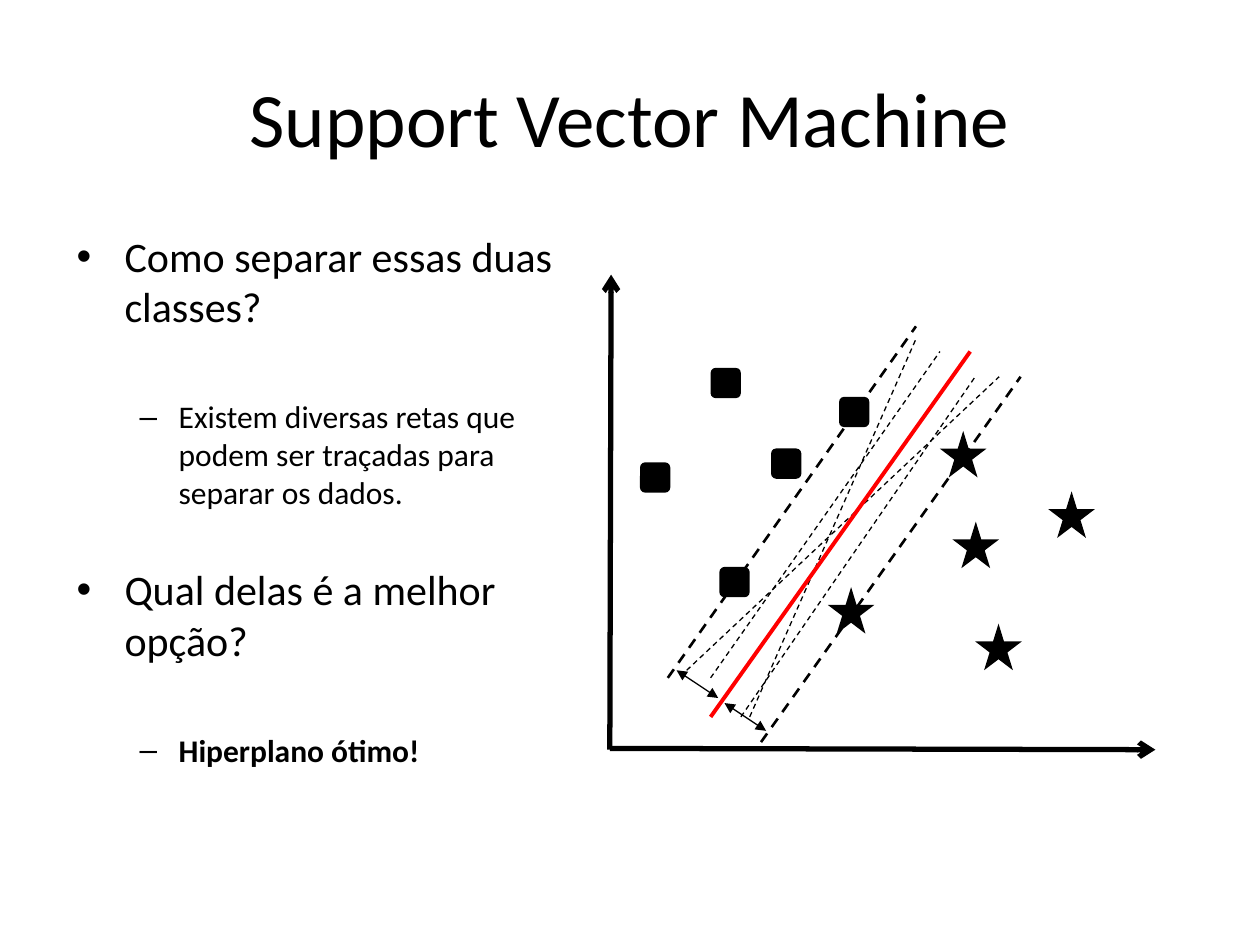
"""Build the Support Vector Machine slide with its separating-lines diagram."""
import pptx
import pptx.dml.color
import pptx.enum.dml
import pptx.enum.shapes
import pptx.enum.text
import pptx.oxml.ns
import pptx.util
from lxml import etree

Inches, Pt = pptx.util.Inches, pptx.util.Pt
RGB = pptx.dml.color.RGBColor
SHAPE = pptx.enum.shapes.MSO_SHAPE
qn = pptx.oxml.ns.qn
THEME = {"font": "Calibri", "ink": RGB(0, 0, 0), "best": RGB(255, 0, 0),
         "paper": RGB(255, 255, 255), "title": 44, "levels": (24, 18)}


def add_line(s, start, end, width, color=THEME["ink"], dashed=False, head=None, tail=None):
    c = s.shapes.add_connector(pptx.enum.shapes.MSO_CONNECTOR.STRAIGHT,
                               *map(Inches, start + end))
    c.line.width = Pt(width)
    c.line.color.rgb = color
    if dashed:
        c.line.dash_style = pptx.enum.dml.MSO_LINE.DASH
    for tag, kind in (("a:headEnd", head), ("a:tailEnd", tail)):
        if kind:
            etree.SubElement(c.line._get_or_add_ln(), qn(tag), type=kind)
    etree.SubElement(c._element.spPr, qn("a:effectLst"))


def add_run(p, text, size, bold=False):
    r = p.add_run()
    r.text = text
    r.font.name = THEME["font"]
    r.font.size = Pt(size)
    r.font.bold = bold
    r.font.color.rgb = THEME["ink"]


prs = pptx.Presentation()
prs.slide_width, prs.slide_height = Inches(10), Inches(7.5)
s = prs.slides.add_slide(prs.slide_layouts[6])
s.background.fill.solid()
s.background.fill.fore_color.rgb = THEME["paper"]

tf = s.shapes.add_textbox(Inches(0.5), Inches(0.3), Inches(9), Inches(1.25)).text_frame
tf.word_wrap = True
tf.vertical_anchor = pptx.enum.text.MSO_ANCHOR.MIDDLE
p = tf.paragraphs[0]
p.alignment = pptx.enum.text.PP_ALIGN.CENTER
add_run(p, "Support Vector Machine", THEME["title"])

candidates = [((5.45, 5.32), (7.93, 2.99)), ((5.95, 5.69), (7.27, 2.69)),
              ((5.64, 5.38), (7.46, 2.79)), ((5.88, 5.69), (7.74, 2.99))]
margins = [((5.3, 5.38), (7.27, 2.59)), ((6.04, 5.89), (8.1, 2.99))]
for lines, width in ((candidates, 0.75), (margins, 1.5)):
    for start, end in lines:
        add_line(s, start, end, width, dashed=True)

squares = [(5.08, 3.67), (5.71, 4.5), (6.66, 3.15), (5.64, 2.92), (6.12, 3.56)]
stars = [(6.57, 4.66), (7.56, 4.14), (7.74, 4.95), (7.46, 3.42), (8.32, 3.9)]
for kind, size, points in ((SHAPE.ROUNDED_RECTANGLE, 0.24, squares),
                           (SHAPE.STAR_5_POINT, 0.37, stars)):
    for x, y in points:
        sp = s.shapes.add_shape(kind, Inches(x), Inches(y), Inches(size), Inches(size))
        sp.shadow.inherit = False
        sp.fill.solid()
        sp.fill.fore_color.rgb = THEME["ink"]
        sp.line.fill.background()

add_line(s, (5.64, 5.69), (7.7, 2.79), 2.25, color=THEME["best"])
for start, end in (((5.7, 5.54), (5.37, 5.32)), ((6.08, 5.8), (5.75, 5.58))):
    add_line(s, start, end, 0.75, head="triangle", tail="triangle")
for start, end in (((4.84, 5.95), (4.85, 2.18)), ((4.84, 5.94), (9.17, 5.95))):
    add_line(s, start, end, 3, tail="arrow")

tf = s.shapes.add_textbox(Inches(0.51), Inches(1.78), Inches(4.25), Inches(4.49)).text_frame
tf.word_wrap = True
bullets = [(0, "Como separar essas duas classes?", 0, False),
           (1, "Existem diversas retas que podem ser traçadas para separar os dados.", 37.7, False),
           (0, "Qual delas é a melhor opção?", 30.4, False),
           (1, "Hiperplano ótimo!", 37.7, True)]
for i, (level, text, before, bold) in enumerate(bullets):
    p = tf.add_paragraph() if i else tf.paragraphs[0]
    p.level = level
    p.space_before = Pt(before)
    margin, hang, mark = ((0.38, 0.38, "•"), (0.81, 0.31, "–"))[level]
    pPr = p._p.get_or_add_pPr()
    pPr.set("marL", str(Inches(margin)))
    pPr.set("indent", str(-Inches(hang)))
    etree.SubElement(pPr, qn("a:buFont"), typeface="Arial")
    etree.SubElement(pPr, qn("a:buChar"), char=mark)
    add_run(p, text, THEME["levels"][level], bold)

prs.save("out.pptx")
